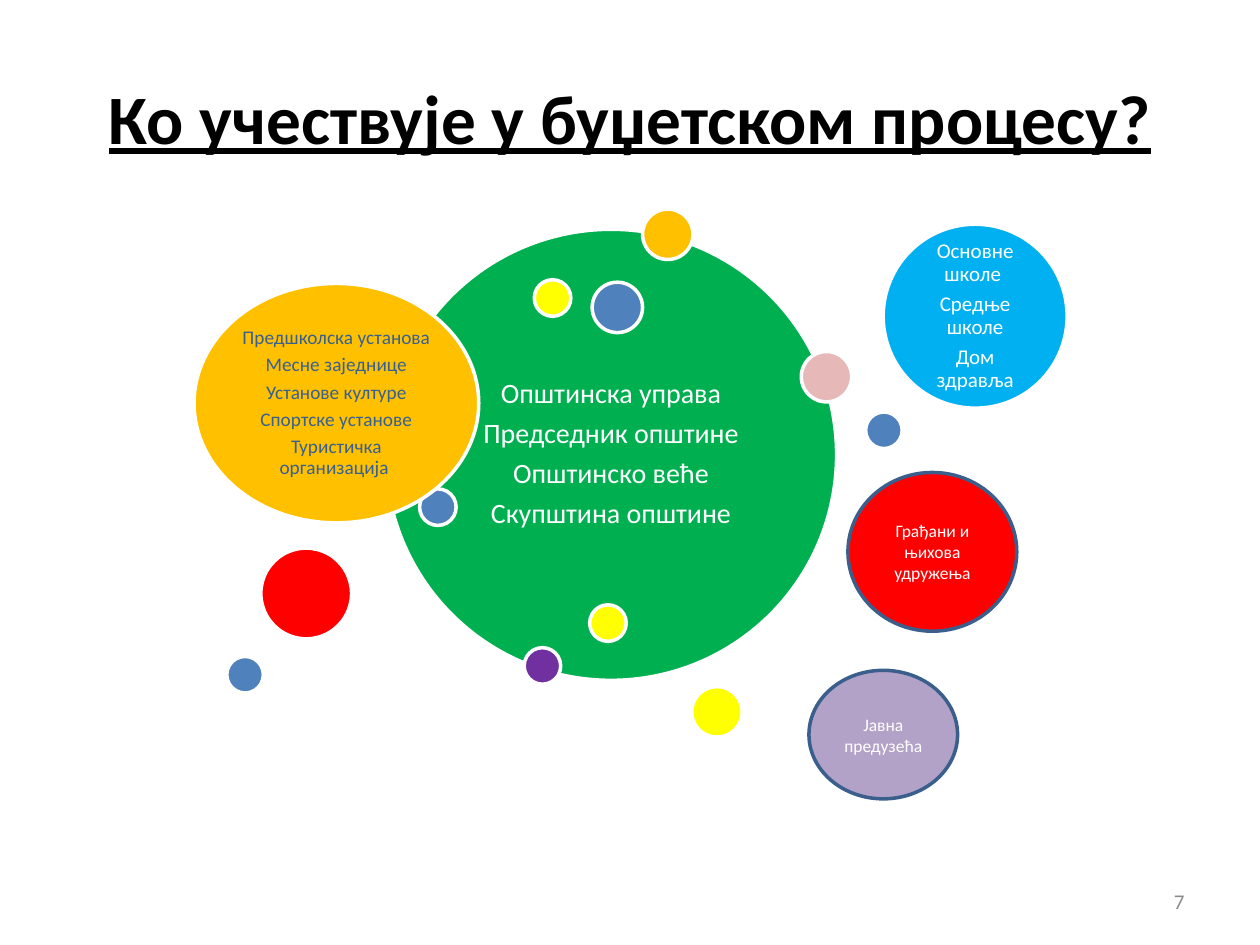
from pptx import Presentation
from pptx.dml.color import RGBColor
from pptx.enum.shapes import MSO_SHAPE
from pptx.enum.text import MSO_ANCHOR, MSO_AUTO_SIZE, PP_ALIGN
from pptx.util import Inches, Pt

WHITE = "FFFFFF"
GREEN = "00B050"
ORANGE = "FFC000"
PURPLE = "7030A0"
BLUE = "4F81BD"
YELLOW = "FFFF00"
RED = "FF0000"
SKY = "00B0F0"
PINK = "E6B9B8"
LILAC = "B3A2C7"
NAVY = "3A5F8C"
SMALL, MEDIUM, LARGE = 0.29, 0.4, 0.72


def color(value):
    """Turn a hex string into a colour."""
    return RGBColor.from_string(value)


def write(shape, lines, size, ink, align=PP_ALIGN.CENTER, bold=None,
          underline=None, spacing=None, after=0, inset=None):
    """Write one paragraph per line, vertically centred in the shape."""
    frame = shape.text_frame
    frame.word_wrap = True
    frame.auto_size = MSO_AUTO_SIZE.NONE
    frame.vertical_anchor = MSO_ANCHOR.MIDDLE
    if inset is not None:
        frame.margin_left = frame.margin_right = Inches(inset)
        frame.margin_top = frame.margin_bottom = Inches(inset)
    for index, line in enumerate(lines):
        paragraph = frame.add_paragraph() if index else frame.paragraphs[0]
        paragraph.alignment = align
        paragraph.space_after = Pt(after)
        if spacing:
            paragraph.line_spacing = spacing
        run = paragraph.add_run()
        run.text = line
        font = run.font
        font.name = "Calibri"
        font.size = Pt(size)
        font.color.rgb = color(ink)
        font.bold = bold
        font.underline = underline


def add_ellipse(slide, left, top, width, height, fill, outline=WHITE):
    """Add an outlined ellipse."""
    shape = slide.shapes.add_shape(MSO_SHAPE.OVAL, Inches(left), Inches(top),
                                   Inches(width), Inches(height))
    shape.shadow.inherit = False
    shape.fill.solid()
    shape.fill.fore_color.rgb = color(fill)
    shape.line.color.rgb = color(outline)
    shape.line.width = Pt(2)
    return shape


def add_dots(slide, dots):
    """Add plain circles from left, top, diameter and fill."""
    for left, top, diameter, fill in dots:
        add_ellipse(slide, left, top, diameter, diameter, fill)


def add_group(slide, box, fill, lines, size, ink=WHITE, inset=0.05):
    """Add an ellipse that lists a group of participants."""
    shape = add_ellipse(slide, *box, fill)
    write(shape, lines, size, ink, spacing=0.9, after=round(size * 0.35, 1),
          inset=inset)


def add_partner(slide, box, fill, name):
    """Add a navy-outlined ellipse with one name."""
    write(add_ellipse(slide, *box, fill, outline=NAVY), [name], 10, WHITE)


def add_title(slide, text):
    """Place and fill the title placeholder."""
    title = slide.shapes.title
    title.left, title.top = Inches(0.5), Inches(0.3)
    title.width, title.height = Inches(9), Inches(1.25)
    write(title, [text], 39.6, "000000", bold=True, underline=True)


def add_page_number(slide, number):
    """Add the page number at the lower right."""
    box = slide.shapes.add_textbox(Inches(7.17), Inches(6.95),
                                   Inches(2.33), Inches(0.4))
    write(box, [number], 12, "8C8C8C", align=PP_ALIGN.RIGHT)


def main():
    """Build the slide on participants in the budget process."""
    presentation = Presentation()
    presentation.slide_width = Inches(10)
    presentation.slide_height = Inches(7.5)
    slide = presentation.slides.add_slide(presentation.slide_layouts[5])
    add_title(slide, "Ко учествује у буџетском процесу?")
    add_page_number(slide, "7")

    add_group(slide, (3.06, 1.82, 3.58, 3.58), GREEN,
              ["Општинска управа", "Председник општине",
               "Општинско веће", "Скупштина општине"], 16, inset=0.07)
    add_dots(slide, [
        (5.1, 1.66, MEDIUM, ORANGE),
        (4.16, 5.14, SMALL, PURPLE),
        (6.87, 3.27, SMALL, BLUE),
        (5.49, 5.45, MEDIUM, YELLOW),
        (4.24, 2.22, SMALL, YELLOW),
        (3.33, 3.88, SMALL, BLUE),
    ])
    add_group(slide, (1.54, 2.25, 2.26, 1.9), ORANGE,
              ["Предшколска установа", "Месне заједнице", "Установе културе",
               "Спортске установе", "Туристичка организација "], 11,
              ink="376092")
    add_dots(slide, [
        (4.7, 2.24, MEDIUM, BLUE),
        (2.07, 4.35, LARGE, RED),
    ])
    add_group(slide, (7.01, 1.78, 1.46, 1.46), SKY,
              ["Основне школе ", "Средње школе", "Дом здравља"], 12)
    add_dots(slide, [
        (6.36, 2.79, MEDIUM, PINK),
        (1.8, 5.21, SMALL, BLUE),
        (4.68, 4.8, SMALL, YELLOW),
    ])
    add_partner(slide, (6.73, 3.75, 1.34, 1.26), RED,
                "Грађани и њихова удружења")
    add_partner(slide, (6.42, 5.32, 1.18, 1.02), LILAC, "Јавна предузећа")
    presentation.save("out.pptx")


if __name__ == "__main__":
    main()
